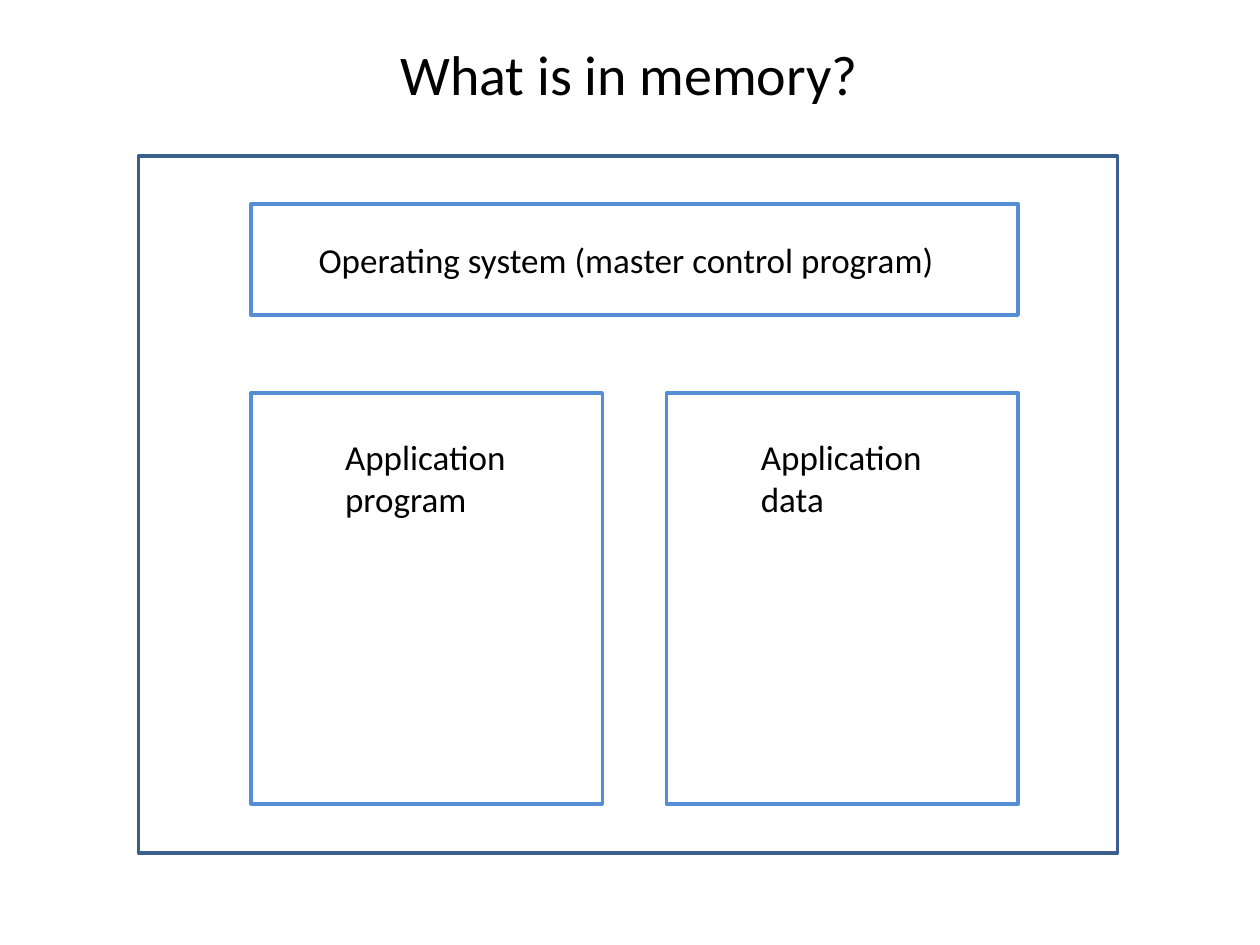
"""Build a slide that shows what a computer holds in memory."""
from pptx import Presentation
from pptx.dml.color import RGBColor
from pptx.enum.shapes import MSO_SHAPE
from pptx.enum.text import MSO_ANCHOR, PP_ALIGN
from pptx.util import Inches, Pt

COLORS = {"frame": "3A5F8C", "part": "558ED5", "text": "000000"}


def write(shape, text, size=20, color="text", font="Calibri", align=PP_ALIGN.LEFT):
    frame = shape.text_frame
    frame.word_wrap = False
    frame.vertical_anchor = MSO_ANCHOR.TOP
    frame.text = text
    for para in frame.paragraphs:
        para.alignment = align
        para.font.size = Pt(size)
        para.font.name = font
        para.font.color.rgb = RGBColor.from_string(COLORS[color])


deck = Presentation()
deck.slide_width, deck.slide_height = Inches(10), Inches(7.5)
slide = deck.slides.add_slide(deck.slide_layouts[5])
shapes = slide.shapes

title = shapes.title
title.left, title.top = Inches(3.06), Inches(0.26)
title.width, title.height = Inches(3.87), Inches(0.64)
write(title, "What is in memory?", size=32, align=PP_ALIGN.CENTER)

boxes = [
    ("frame", 1.1, 1.24, 7.77, 5.53),
    ("part", 1.99, 1.62, 6.09, 0.88),
    ("part", 1.99, 3.12, 2.79, 3.26),
    ("part", 5.29, 3.12, 2.79, 3.26),
]
for color, *place in boxes:
    box = shapes.add_shape(MSO_SHAPE.RECTANGLE, *map(Inches, place))
    box.shadow.inherit = False
    box.fill.background()
    box.line.color.rgb = RGBColor.from_string(COLORS[color])
    box.line.width = Pt(2)

labels = [
    ("Operating system (master control program)", 2.43, 1.84, 5.13, 0.44),
    ("Application\nprogram", 2.64, 3.41, 1.49, 0.77),
    ("Application\ndata", 5.94, 3.41, 1.49, 0.77),
]
for text, *place in labels:
    write(shapes.add_textbox(*map(Inches, place)), text)

deck.save("out.pptx")
